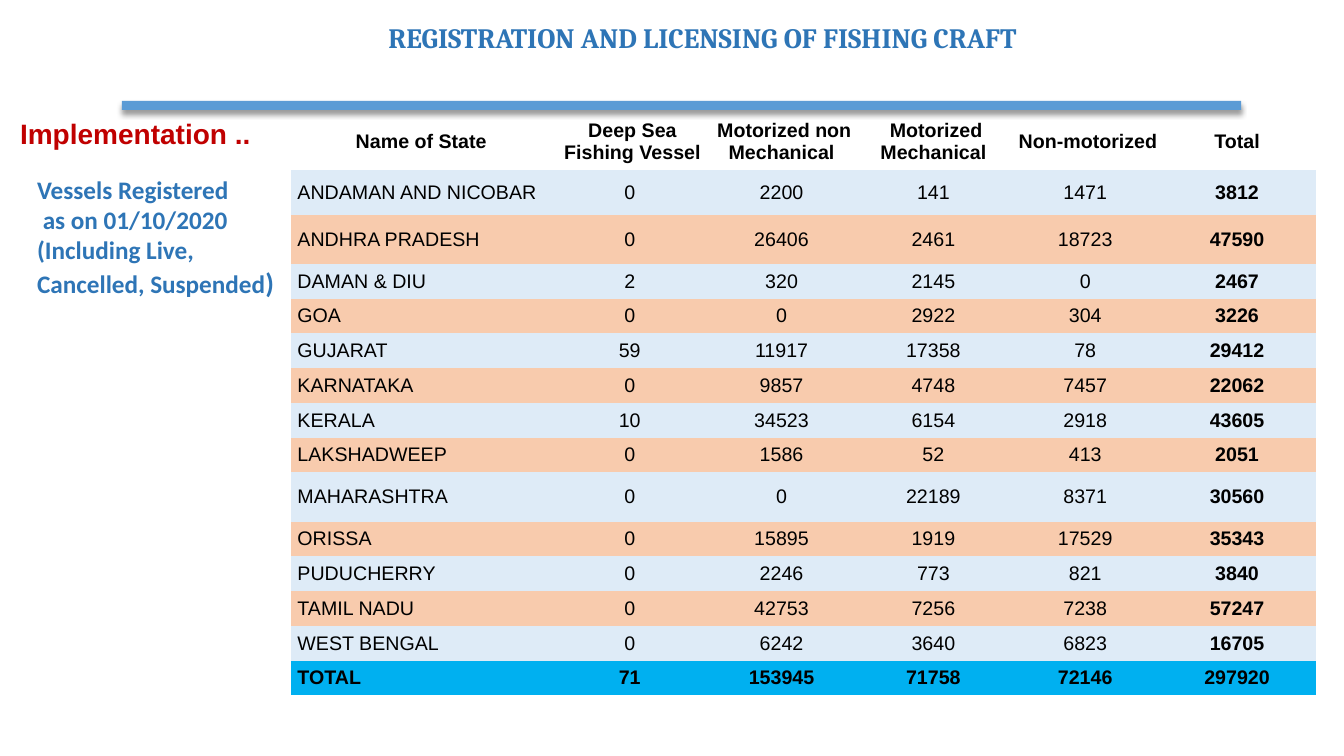
from pptx import Presentation
from pptx.dml.color import RGBColor
from pptx.enum.shapes import MSO_SHAPE
from pptx.enum.text import MSO_ANCHOR, MSO_AUTO_SIZE, PP_ALIGN
from pptx.oxml import parse_xml
from pptx.oxml.ns import nsdecls, qn
from pptx.util import Inches, Pt

COLORS = {
    "bar": "5B9BD5", "blue": "2E75B6", "red": "C00000", "black": "000000",
    "pale": "DEEBF7", "peach": "F8CBAD", "total": "00B0F0",
}
NO_GRID = "{2D5ABB26-0587-4C30-8999-92F81FD0307C}"
HEADS = ["Name of State", "Deep Sea Fishing Vessel", "Motorized non Mechanical",
         "Motorized Mechanical", "Non-motorized", "Total"]
STATES = [
    ("ANDAMAN AND NICOBAR", 0, 2200, 141, 1471, 3812),
    ("ANDHRA PRADESH", 0, 26406, 2461, 18723, 47590),
    ("DAMAN & DIU", 2, 320, 2145, 0, 2467),
    ("GOA", 0, 0, 2922, 304, 3226),
    ("GUJARAT", 59, 11917, 17358, 78, 29412),
    ("KARNATAKA", 0, 9857, 4748, 7457, 22062),
    ("KERALA", 10, 34523, 6154, 2918, 43605),
    ("LAKSHADWEEP", 0, 1586, 52, 413, 2051),
    ("MAHARASHTRA", 0, 0, 22189, 8371, 30560),
    ("ORISSA", 0, 15895, 1919, 17529, 35343),
    ("PUDUCHERRY", 0, 2246, 773, 821, 3840),
    ("TAMIL NADU", 0, 42753, 7256, 7238, 57247),
    ("WEST BENGAL", 0, 6242, 3640, 6823, 16705),
]
TOTALS = ("TOTAL", 71, 153945, 71758, 72146, 297920)
TALL = {0: 0.57, 1: 0.44, 2: 0.49, 9: 0.49}
WIDTH, HEIGHT, FIRST = 10.16, 5.78, 2.63


def color(name):
    return RGBColor.from_string(COLORS[name])


def add_run(para, text, size, font, tint, bold=True):
    run = para.add_run()
    run.text = text
    run.font.size = Pt(size)
    run.font.name = font
    run.font.bold = bold
    run.font.color.rgb = color(tint)


def add_title(slide, text):
    title = slide.shapes.title
    title.left, title.top = Inches(2.96), Inches(0.15)
    title.width, title.height = Inches(8.02), Inches(0.55)
    frame = title.text_frame
    frame.auto_size = MSO_AUTO_SIZE.NONE
    frame.vertical_anchor = MSO_ANCHOR.TOP
    para = frame.paragraphs[0]
    para.alignment = PP_ALIGN.CENTER
    add_run(para, text, 20, "Cambria", "blue")


def add_bar(slide):
    bar = slide.shapes.add_shape(MSO_SHAPE.RECTANGLE, Inches(1.21), Inches(1),
                                 Inches(11.1), Inches(0.09))
    bar.fill.solid()
    bar.fill.fore_color.rgb = color("bar")
    bar.line.fill.background()
    bar._element.spPr.append(parse_xml(
        f'<a:effectLst {nsdecls("a")}><a:outerShdw blurRad="{Pt(4)}" dist="{Pt(3)}" '
        f'dir="5400000" rotWithShape="0"><a:srgbClr val="{COLORS["black"]}">'
        '<a:alpha val="40000"/></a:srgbClr></a:outerShdw></a:effectLst>'))


def add_text(slide, left, top, width, height, lines):
    """Each line is a list of (text, size, font, colour) runs."""
    box = slide.shapes.add_textbox(Inches(left), Inches(top),
                                   Inches(width), Inches(height))
    frame = box.text_frame
    frame.word_wrap = True
    for i, line in enumerate(lines):
        para = frame.add_paragraph() if i else frame.paragraphs[0]
        for run in line:
            add_run(para, *run)


def fill_cell(cell, text, bold, fill, align):
    cell.margin_left = cell.margin_right = Inches(0.06)
    cell.margin_top = cell.margin_bottom = Inches(0.03)
    cell.vertical_anchor = MSO_ANCHOR.MIDDLE
    if fill:
        cell.fill.solid()
        cell.fill.fore_color.rgb = color(fill)
    else:
        cell.fill.background()
    para = cell.text_frame.paragraphs[0]
    para.alignment = align
    add_run(para, text, 14, "Arial", "black", bold)


def add_grid(slide):
    rows = [HEADS, *STATES, TOTALS]
    last_row, last_col = len(rows) - 1, len(HEADS) - 1
    table = slide.shapes.add_table(len(rows), len(HEADS), Inches(2.89), Inches(1.12),
                                   Inches(WIDTH), Inches(HEIGHT)).table
    table._tbl.tblPr.find(qn("a:tableStyleId")).text = NO_GRID
    for c, column in enumerate(table.columns):
        column.width = Inches((WIDTH - FIRST) / last_col if c else FIRST)
    low = (HEIGHT - sum(TALL.values())) / (len(rows) - len(TALL))
    for r, row in enumerate(rows):
        table.rows[r].height = Inches(TALL.get(r, low))
        fill = {0: None, last_row: "total"}.get(r, "pale" if r % 2 else "peach")
        for c, value in enumerate(row):
            name = c == 0 and r > 0
            text = value if name else f"{value} "
            bold = r in (0, last_row) or c == last_col
            align = PP_ALIGN.LEFT if name else PP_ALIGN.CENTER
            fill_cell(table.cell(r, c), text, bold, fill, align)


def main():
    deck = Presentation()
    deck.slide_width, deck.slide_height = Inches(13.33), Inches(7.5)
    slide = deck.slides.add_slide(deck.slide_layouts[5])
    add_bar(slide)
    add_text(slide, 0.1, 1.11, 3.08, 0.44,
             [[("Implementation ..", 20, "Arial", "red")]])
    note = (18, "Calibri", "blue")
    add_text(slide, 0.27, 1.68, 2.74, 1.68, [
        [("Vessels Registered", *note)],
        [(" as on 01/10/2020", *note)],
        [("(Including Live, Cancelled, Suspended", *note), (")", 20, "Calibri", "blue")],
    ])
    add_grid(slide)
    add_title(slide, "REGISTRATION AND LICENSING OF FISHING CRAFT")
    deck.save("out.pptx")


if __name__ == "__main__":
    main()
